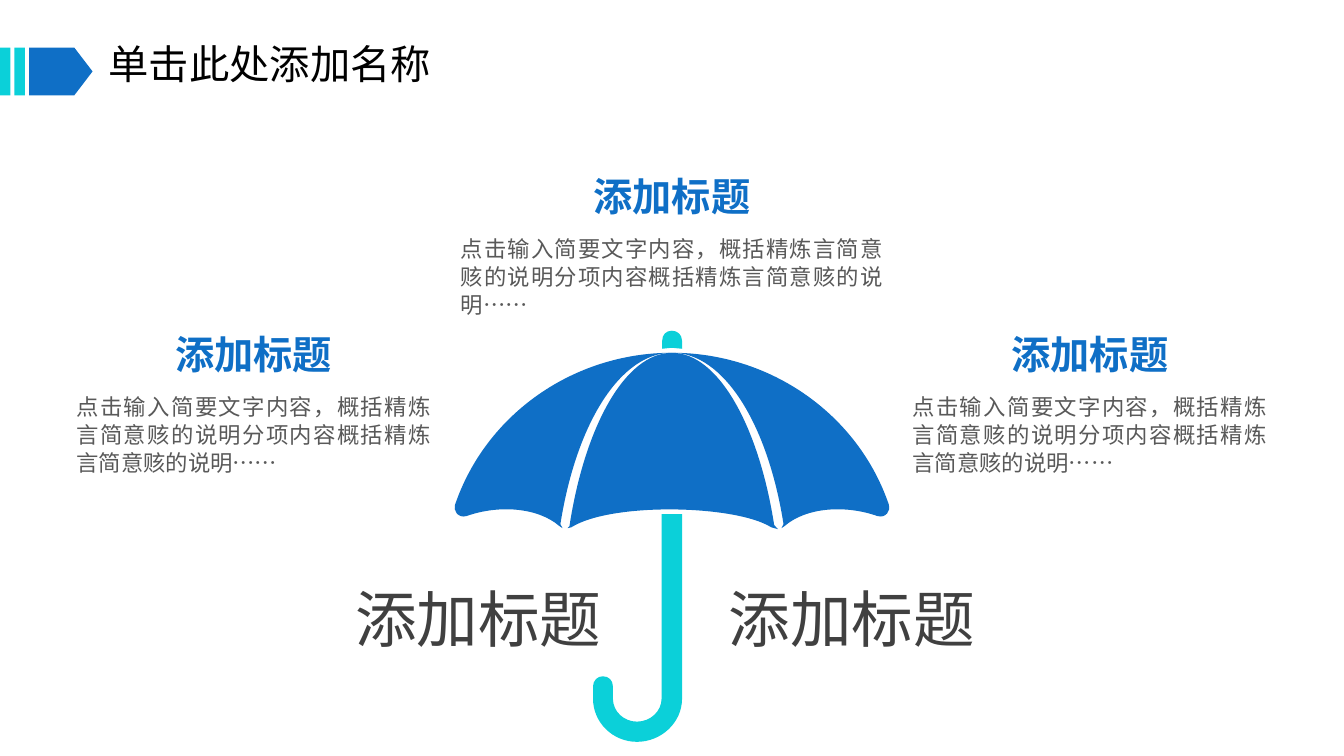
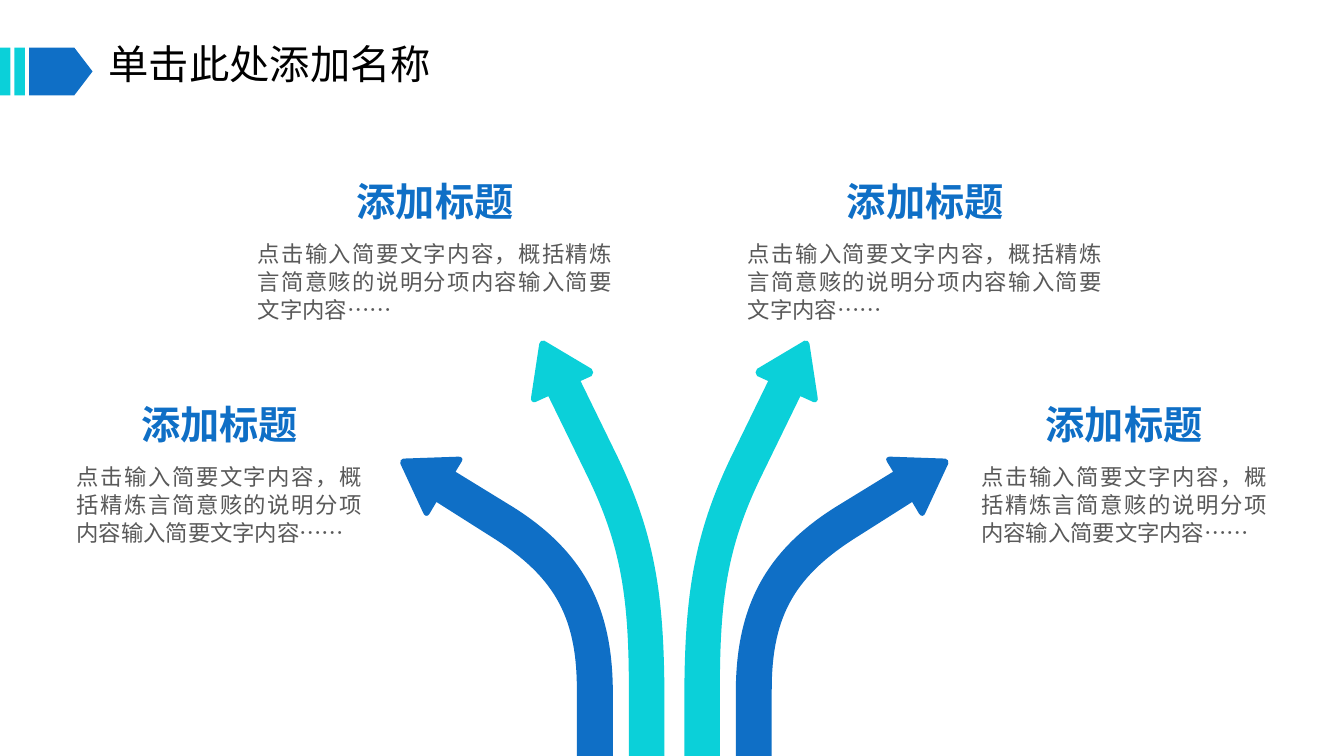
from pptx import Presentation
from pptx.dml.color import RGBColor
from pptx.enum.lang import MSO_LANGUAGE_ID
from pptx.enum.shapes import MSO_SHAPE
from pptx.enum.text import MSO_AUTO_SIZE, PP_ALIGN
from pptx.oxml.ns import qn
from pptx.util import Pt
from lxml.etree import SubElement

COLORS = {
    "blue": "0F6FC6",
    "cyan": "0BD0D9",
    "title": "000000",
    "label": "404040",
    "body": "595959",
}
FONT = "Noto Sans CJK SC"
FORMATS = {
    "title": {"font": {"size": Pt(28.8)}, "paragraph": {"line_spacing": 0.9}},
    "heading": {"font": {"size": Pt(28), "bold": True},
                "paragraph": {"alignment": PP_ALIGN.CENTER}},
    "body": {"font": {"size": Pt(16)},
             "paragraph": {"alignment": PP_ALIGN.JUSTIFY, "line_spacing": Pt(20)}},
    "label": {"font": {"size": Pt(44)},
              "paragraph": {"alignment": PP_ALIGN.CENTER}},
}
TEXT_COLORS = {"title": "title", "heading": "blue", "body": "body", "label": "label"}
FRAME = {"margin_left": 0, "margin_top": 0, "margin_right": 0, "margin_bottom": 0,
         "word_wrap": True}

TITLE = "单击此处添加名称"
HEADING = "添加标题"
UMBRELLA_TEXT = "点击输入简要文字内容，概括精炼言简意赅的说明分项内容概括精炼言简意赅的说明……"
ARROW_TEXT = "点击输入简要文字内容，概括精炼言简意赅的说明分项内容输入简要文字内容……"

CENTER = 480
ARROW_AXIS = 481.7

SIDE_PANEL = """M 400.3 374.4 C 411.8 301.7 443.5 252 480 252
C 409.7 252 347 295.9 325 360.7 C 323.6 364.3 327 370.6 333.4 368.6
C 355.7 360.7 383.8 362.2 399.6 375.8 L 401.8 377.3"""
MIDDLE_PANEL = """M 553 375.1 C 542.2 305.3 513.4 252 480 252
C 446.4 252 417.6 305.3 406.8 375.8 L 405.4 377.3 L 408.2 376.6
C 437 358.6 525.6 360.7 550.8 376.6 L 555.8 378"""
CAP = """M 480 236.2 C 475.9 236.2 473 239 473 243.4 L 473 249.1
C 475.2 249.1 477.4 248.4 480 248.4 C 482.2 248.4 484.6 249.1 487.2 249.1
L 487.2 243.4 C 487.2 239 483.8 236.2 480 236.2"""
HANDLE = """M 472.6 367.2 L 487.2 367.2 L 487.2 499
C 487.2 516.2 472.3 529.9 455 529.9 C 437.8 529.9 423.6 516.2 423.6 499
L 423.6 490.3 C 423.6 486 427 483.1 430.6 483.1
C 434.9 483.1 437.8 486 437.8 490.3 L 437.8 499
C 437.8 508.3 445.7 515.5 455 515.5 C 464.4 515.5 472.6 508.3 472.6 499"""
OUTER_ARROW = """M 437.8 540 L 437.8 495.4 C 437.8 438.5 420.5 396 366.5 362.2
L 325.4 337 L 329.8 329.8 C 331.2 327.6 329.8 326.2 327.6 326.2
L 288 327.6 C 286.6 327.6 285.4 329.8 286 331.2
L 302.4 366.5 C 303.1 368.6 305.3 369.4 306.7 367.2
L 311.8 358.6 L 349.2 382.3 C 394.6 410.4 412.1 438.5 412.1 492.5 L 412.1 540"""
INNER_ARROW = """M 449.2 540 L 474.6 540 L 474.6 501.8
C 474.6 428.4 468.7 383.8 441.4 326.9 L 414.7 272.2
L 422.6 268.6 C 424.1 267.1 424.1 265 422.6 263.5
L 388.8 243.4 C 387.4 242.6 385.2 244.1 385.2 245.5
L 379.4 283.7 C 378.7 285.8 380.2 288 382.3 287.3
L 391.7 283 L 419.8 340.6 C 443.5 389.5 449.2 427 449.2 491"""


def apply(target, values):
    for attribute, value in values.items():
        setattr(target, attribute, value)


def read_outline(outline):
    commands, numbers = [], []
    for token in outline.split():
        if token.isalpha():
            commands.append(token)
        else:
            numbers.append(float(token))
    return commands, list(zip(numbers[::2], numbers[1::2]))


def bend(shape, commands):
    lines = iter(list(shape._element.iter(qn("a:lnTo"))))
    for command in commands[1:]:
        segment = next(lines)
        if command == "C":
            segment.addprevious(curve := segment.makeelement(qn("a:cubicBezTo")))
            for line in (segment, next(lines), next(lines)):
                curve.append(line[0])
                line.getparent().remove(line)


class Deck:
    def __init__(self):
        self.presentation = Presentation()
        apply(self.presentation, {"slide_width": Pt(960), "slide_height": Pt(540)})
        self.slide = None

    def start(self, title):
        self.slide = self.presentation.slides.add_slide(self.presentation.slide_layouts[6])
        self.text(title, "title", 77.6, 31.7, 396.7, 39.6)
        pointer = self.block(MSO_SHAPE.PENTAGON, "blue", 20.9, 45.2)
        pointer.adjustments[0] = 0.382
        for left in (10.2, 0):
            self.block(MSO_SHAPE.RECTANGLE, "cyan", left, 7.5)

    def paint(self, shape, color):
        shape.shadow.inherit = False
        shape.fill.solid()
        shape.fill.fore_color.rgb = RGBColor.from_string(COLORS[color])
        shape.line.fill.background()
        return shape

    def block(self, preset, color, left, width):
        shape = self.slide.shapes.add_shape(preset, Pt(left), Pt(34), Pt(width), Pt(34.1))
        return self.paint(shape, color)

    def text(self, content, style, left, top, width, height):
        box = self.slide.shapes.add_textbox(Pt(left), Pt(top), Pt(width), Pt(height))
        frame = box.text_frame
        apply(frame, FRAME)
        if style != "title":
            frame.auto_size = MSO_AUTO_SIZE.SHAPE_TO_FIT_TEXT
        paragraph = frame.paragraphs[0]
        apply(paragraph, FORMATS[style]["paragraph"])
        run = paragraph.add_run()
        run.text = content
        apply(run.font, {"name": FONT, "language_id": MSO_LANGUAGE_ID.SIMPLIFIED_CHINESE,
                         **FORMATS[style]["font"]})
        run.font.color.rgb = RGBColor.from_string(COLORS[TEXT_COLORS[style]])
        SubElement(run.font._element, qn("a:ea"), typeface=FONT)

    def note(self, content, left, top, width, heading_width=146.9):
        self.text(HEADING, "heading", left + (width - heading_width) / 2, top,
                  heading_width, 33.8)
        self.text(content, "body", left, top + 44, width, 60.5)

    def outline(self, shapes, outline, color, mirror_axis=None):
        commands, points = read_outline(outline)
        if mirror_axis is not None:
            points = [(2 * mirror_axis - x, y) for x, y in points]
        corners = [(Pt(x), Pt(y)) for x, y in points]
        builder = shapes.build_freeform(*corners[0], scale=1.0)
        builder.add_line_segments(corners[1:], close=True)
        shape = self.paint(builder.convert_to_shape(), color)
        bend(shape, commands)


def umbrella_slide(deck):
    deck.start(TITLE)
    deck.note(UMBRELLA_TEXT, 54.6, 236.2, 253.4, heading_width=180)
    for left, top, width in ((329.1, 123.1, 301.7), (651.8, 236.2, 253.4)):
        deck.note(UMBRELLA_TEXT, left, top, width)
    for left in (251.8, 518.4):
        deck.text(HEADING, "label", left, 414.7, 180, 53.3)
    umbrella = deck.slide.shapes.add_group_shape().shapes
    for mirror_axis in (None, CENTER):
        deck.outline(umbrella, SIDE_PANEL, "blue", mirror_axis)
    for part, color in ((MIDDLE_PANEL, "blue"), (CAP, "cyan"), (HANDLE, "cyan")):
        deck.outline(umbrella, part, color)


def arrows_slide(deck):
    deck.start(TITLE)
    for mirror_axis in (None, ARROW_AXIS):
        for arrow, color in ((OUTER_ARROW, "blue"), (INNER_ARROW, "cyan")):
            deck.outline(deck.slide.shapes, arrow, color, mirror_axis)
    deck.note(ARROW_TEXT, 54.6, 286.3, 204.3, heading_width=180)
    for left, top, width in ((184.1, 126.7, 253.4), (534.2, 126.7, 253.4),
                             (700.8, 286.3, 204.3)):
        deck.note(ARROW_TEXT, left, top, width)


def main():
    deck = Deck()
    umbrella_slide(deck)
    arrows_slide(deck)
    deck.presentation.save("out.pptx")


if __name__ == "__main__":
    main()
